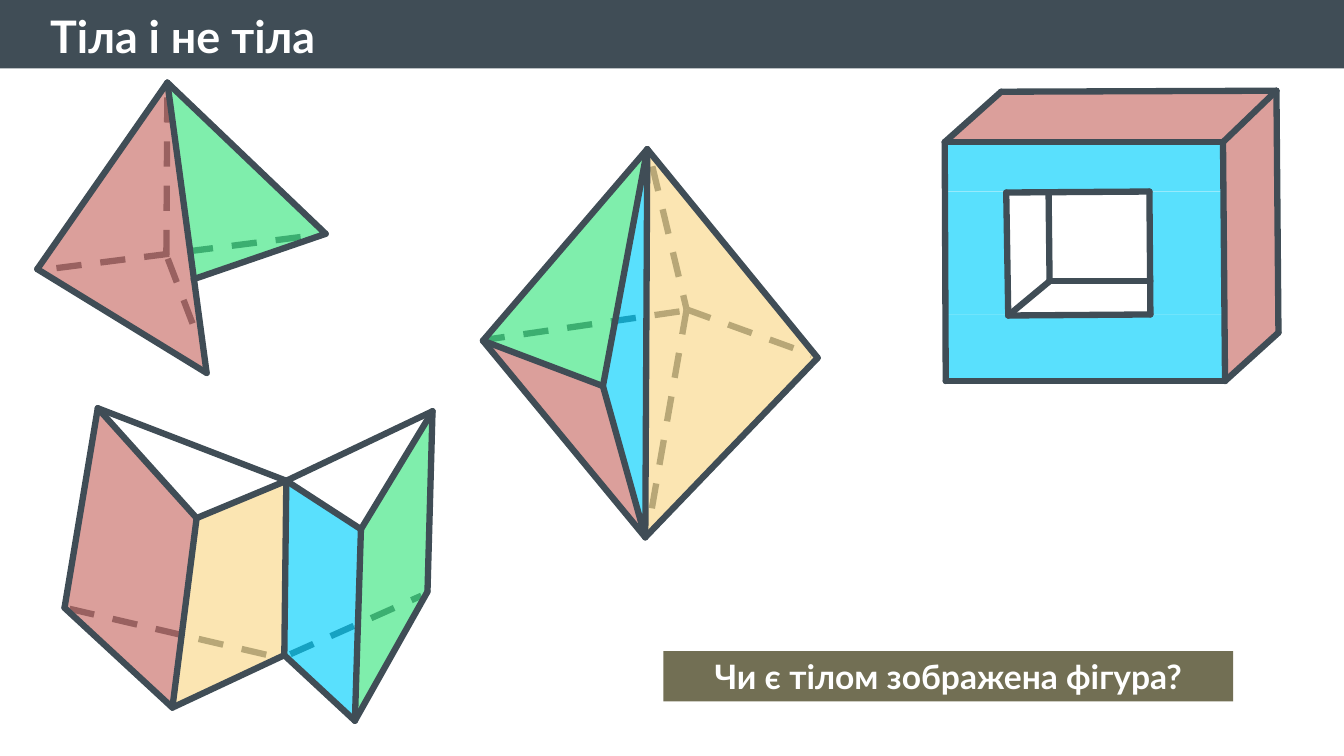
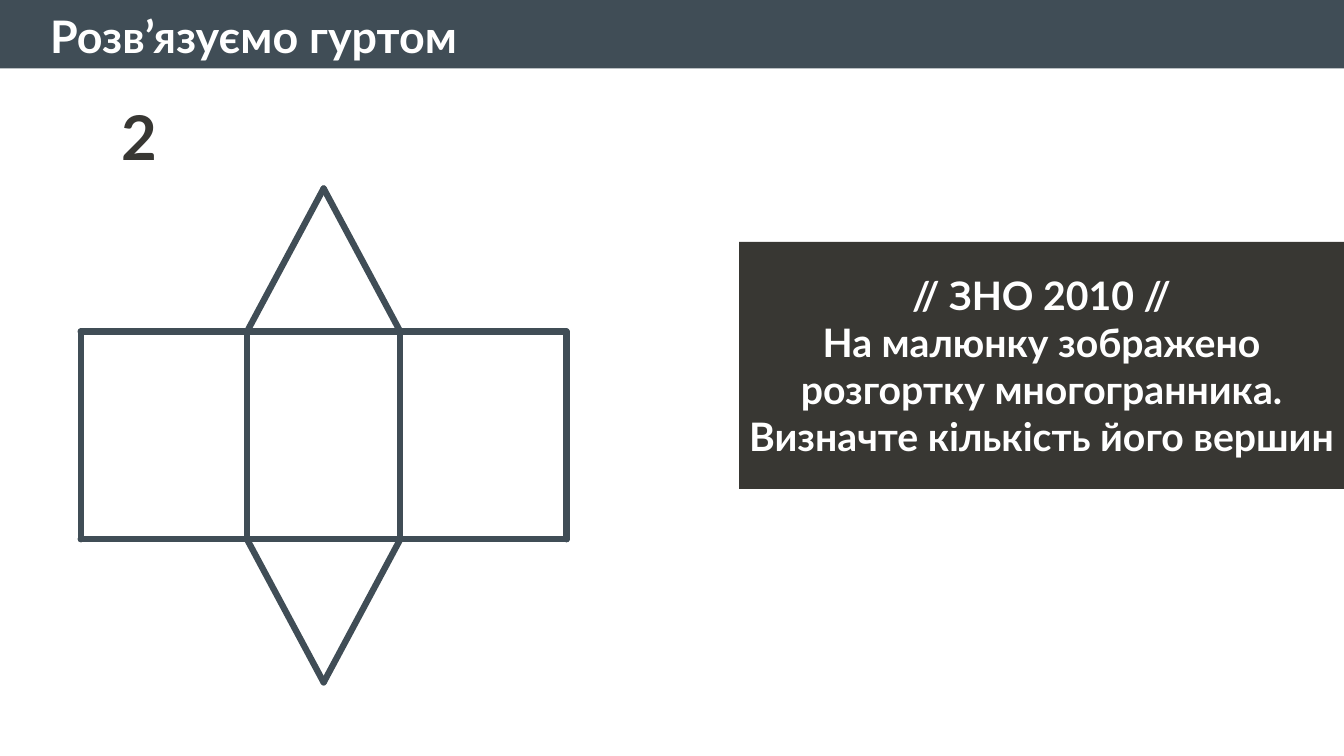
"""Build two geometry slides: solids and non-solids, and the net of a prism."""
from dataclasses import dataclass

from lxml.etree import SubElement
from pptx import Presentation
from pptx.dml.color import RGBColor
from pptx.enum.dml import MSO_LINE
from pptx.enum.shapes import MSO_CONNECTOR, MSO_SHAPE
from pptx.enum.text import MSO_ANCHOR, PP_ALIGN
from pptx.oxml.ns import qn
from pptx.util import Inches, Pt


@dataclass(frozen=True)
class Theme:
    font: str = "Lato"
    slate: str = "404D56"
    dark: str = "383733"
    olive: str = "726F54"
    white: str = "FFFFFF"
    red: str = "C96D66"
    green: str = "3BE580"
    blue: str = "00D0FC"
    sand: str = "F9D889"
    alpha: int = 65
    stroke: float = 4.5
    title: int = 32
    label: int = 24
    body: int = 28
    number: int = 44


theme = Theme()


def write(slide, text, x, y, w, h, size=theme.title, color=theme.white,
          fill=None, align=PP_ALIGN.CENTER):
    """Place bold text, on a filled rectangle when fill is given."""
    place = [Inches(v) for v in (x, y, w, h)]
    if fill:
        box = slide.shapes.add_shape(MSO_SHAPE.RECTANGLE, *place)
        box.shadow.inherit = False
        box.fill.solid()
        box.fill.fore_color.rgb = RGBColor.from_string(fill)
        box.line.fill.background()
    else:
        box = slide.shapes.add_textbox(*place)
    frame = box.text_frame
    frame.word_wrap = True
    frame.vertical_anchor = MSO_ANCHOR.MIDDLE if fill else MSO_ANCHOR.TOP
    frame.text = text
    for para in frame.paragraphs:
        para.alignment = align
        for run in para.runs:
            run.font.name = theme.font
            run.font.size = Pt(size)
            run.font.bold = True
            run.font.color.rgb = RGBColor.from_string(color)


def tint(shape, color):
    """Give a face a translucent fill and no outline."""
    shape.shadow.inherit = False
    shape.fill.solid()
    shape.fill.fore_color.rgb = RGBColor.from_string(color)
    shape.line.fill.background()
    for node in shape._element.spPr.iter(qn("a:srgbClr")):
        SubElement(node, qn("a:alpha"), val=str(theme.alpha * 1000))


deck = Presentation()
deck.slide_width, deck.slide_height = Inches(13.33), Inches(7.5)
slides = []
for title in ("Тіла і не тіла", "Розв’язуємо гуртом"):
    slide = deck.slides.add_slide(deck.slide_layouts[6])
    write(slide, "", 0, 0, 13.33, 0.68, fill=theme.slate)
    write(slide, title, 0.4, 0.04, 12.5, 0.64, align=PP_ALIGN.LEFT)
    slides.append(slide)
solids, task = slides

for x, y, w, h in ((9.37, 1.41, 2.76, 0.49), (9.37, 1.9, 0.61, 1.22),
                   (11.39, 1.9, 0.74, 1.22), (9.39, 3.12, 2.77, 0.66)):
    tint(solids.shapes.add_shape(MSO_SHAPE.RECTANGLE, Inches(x), Inches(y),
                                 Inches(w), Inches(h)), theme.blue)

pyramid = (
    solids,
    dict(A=(1.66, 0.82), B=(0.37, 2.67), C=(2.05, 3.7), D=(3.23, 2.32),
         E=(1.92, 2.77), O=(1.65, 2.53), b=(0.56, 2.66), c=(1.91, 3.21)),
    "OA bD cO",
    {"ABC": theme.red, "ADE": theme.green},
    "ED AB AD CB CA",
)
screen = (
    solids,
    dict(A=(0.97, 4.05), B=(1.95, 5.14), C=(2.84, 4.77), D=(3.58, 5.25),
         E=(4.29, 4.08), a=(0.64, 6.03), b=(1.71, 7.02), c=(2.82, 6.5),
         d=(3.52, 7.15), e=(4.24, 5.87), p=(0.69, 6.04), q=(2.79, 6.53),
         r=(2.88, 6.49), s=(4.18, 5.91)),
    "pq rs",
    {"ABba": theme.red, "BCcb": theme.sand, "CDdc": theme.blue,
     "DEed": theme.green},
    "Aa Bb Cc Dd Ee AC CE AB BC CD DE ab bc cd de",
)
crystal = (
    solids,
    dict(T=(6.42, 1.48), L=(4.79, 3.38), M=(5.98, 3.83), R=(8.11, 3.55),
         B=(6.4, 5.33), O=(6.81, 3.07), o=(6.74, 3.09), l=(4.82, 3.37),
         b=(6.45, 5.13), t=(6.47, 1.65), r=(8.05, 3.52)),
    "ol Ob tO Or",
    {"TML": theme.green, "TBR": theme.sand, "LMB": theme.red,
     "TBM": theme.blue},
    "TL TR BR LB TM BM ML TB",
)
window = (
    solids,
    dict(A=(9.37, 1.41), B=(12.13, 1.41), C=(12.15, 3.78), D=(9.38, 3.78),
         E=(9.93, 0.91), F=(12.66, 0.9), G=(12.68, 3.3), a=(9.98, 1.91),
         b=(11.4, 1.9), c=(11.41, 3.12), d=(10, 3.13), p=(10.4, 1.92),
         q=(10.41, 2.79), r=(11.41, 2.79)),
    "",
    {"EFBA": theme.red, "FGCB": theme.red},
    "AB BC CD DA EF FG AE BF CG ab bc cd da pq qd qr",
)
net = (
    task,
    dict(A=(0.8, 3.29), B=(2.45, 3.29), C=(3.97, 3.29), D=(5.62, 3.29),
         a=(0.8, 5.35), b=(2.45, 5.35), c=(3.97, 5.35), d=(5.62, 5.35),
         T=(3.21, 1.87), t=(3.21, 6.77)),
    "",
    {},
    "BT TC bt tc AB BC CD ab bc cd Aa Bb Cc Dd",
)

for slide, points, hidden, faces, edges in (pyramid, screen, crystal,
                                            window, net):
    spots = {key: (Inches(x), Inches(y)) for key, (x, y) in points.items()}
    for pairs, dashed in ((hidden, True), (edges, False)):
        for start, end in pairs.split():
            line = slide.shapes.add_connector(
                MSO_CONNECTOR.STRAIGHT, *spots[start], *spots[end])
            line.line.width = Pt(theme.stroke)
            line.line.color.rgb = RGBColor.from_string(theme.slate)
            if dashed:
                line.line.dash_style = MSO_LINE.DASH
            else:
                line.line._get_or_add_ln().set("cap", "rnd")
            SubElement(line._element.spPr, qn("a:effectLst"))
        if dashed:
            for keys, color in faces.items():
                first, *rest = [spots[key] for key in keys]
                path = slide.shapes.build_freeform(*first)
                path.add_line_segments(rest, close=True)
                tint(path.convert_to_shape(), color)

write(solids, "Чи є тілом зображена фігура?", 6.58, 6.46, 5.65, 0.5,
      size=theme.label, fill=theme.olive)
write(task, "2", 0.87, 0.93, 1.03, 0.84, size=theme.number, color=theme.dark)
write(task, "// ЗНО 2010 //\nНа малюнку зображено розгортку многогранника. "
      "Визначте кількість його вершин", 7.33, 2.4, 6, 2.45,
      size=theme.body, fill=theme.dark)

deck.save("out.pptx")
